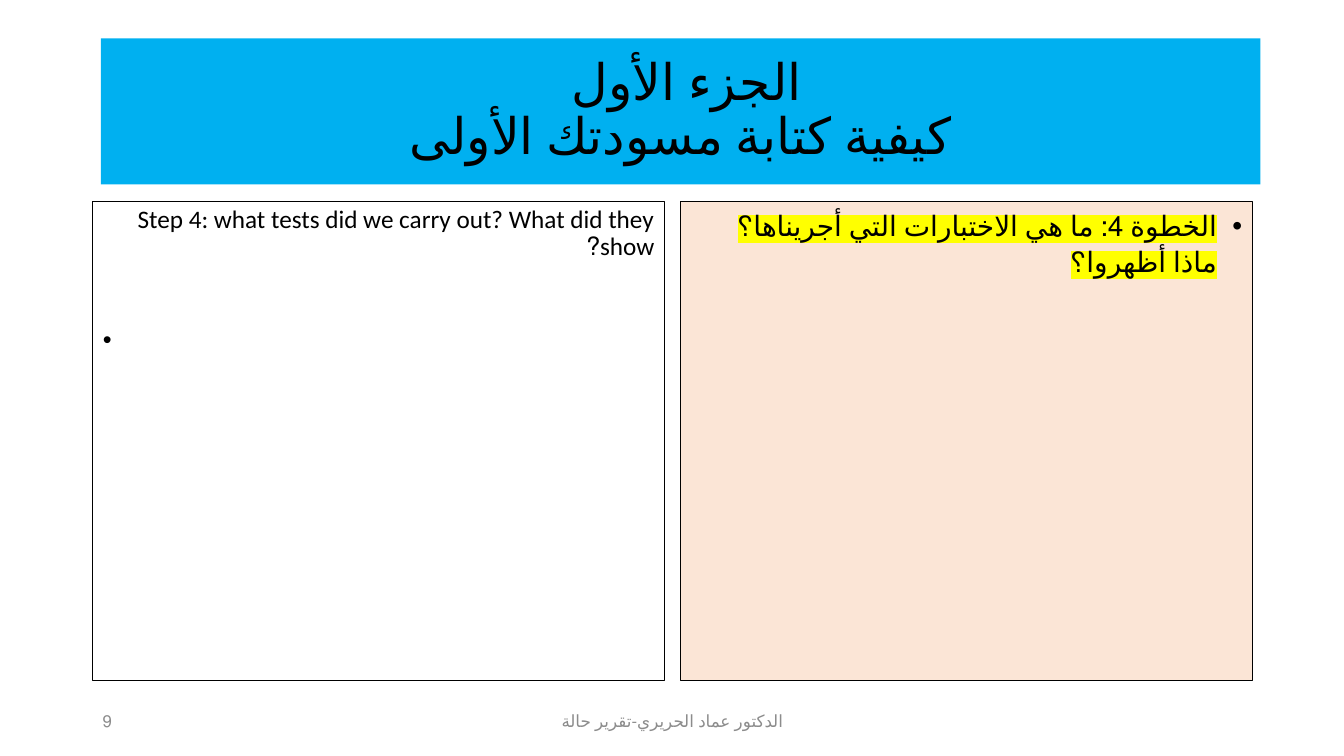
from lxml.etree import SubElement
from pptx import Presentation
from pptx.dml.color import RGBColor
from pptx.enum.lang import MSO_LANGUAGE_ID as Language
from pptx.enum.text import MSO_ANCHOR as Anchor, MSO_AUTO_SIZE as AutoSize, PP_ALIGN as Align
from pptx.oxml.ns import qn
from pptx.util import Inches, Pt

BLACK = RGBColor(0x00, 0x00, 0x00)
BLUE = RGBColor(0x00, 0xB0, 0xF0)
PEACH = RGBColor(0xFB, 0xE5, 0xD6)
YELLOW = RGBColor(0xFF, 0xFF, 0x00)
GRAY = RGBColor(0x8C, 0x8C, 0x8C)

MARGIN, GUTTER, COLUMN = 0.92, 0.16, 5.67
BODY_TOP, BODY_HEIGHT = 2.0, 4.75
FOOTER_TOP, FOOTER_HEIGHT = 6.95, 0.4


def place(shape, box):
    shape.left, shape.top, shape.width, shape.height = map(Inches, box)


def format_runs(paragraph, size, font_name="Calibri", color=BLACK, language=Language.ARABIC):
    for run in paragraph.runs:
        run.font.size = Pt(size)
        run.font.name = font_name
        run.font.color.rgb = color
        run.font.language_id = language


def set_direction(paragraph, align, right_to_left=True):
    paragraph.alignment = align
    paragraph._p.get_or_add_pPr().set("rtl", str(int(right_to_left)))


def set_bullet(paragraph, character=None):
    """Hang the paragraph on a bullet, or remove its bullet and indent."""
    properties = paragraph._p.get_or_add_pPr()
    indent = Inches(0.25) if character else 0
    properties.set("marL", str(indent))
    properties.set("marR", "0")
    properties.set("indent", str(-indent))
    if character:
        SubElement(properties, qn("a:buFont")).set("typeface", "Arial")
        SubElement(properties, qn("a:buChar")).set("char", character)
    else:
        SubElement(properties, qn("a:buNone"))


def highlight(run, color):
    mark = SubElement(run._r.get_or_add_rPr(), qn("a:highlight"))
    SubElement(mark, qn("a:srgbClr")).set("val", str(color))
    run._r.rPr.find(qn("a:solidFill")).addnext(mark)


def fill_title(title, box):
    place(title, box)
    title.fill.solid()
    title.fill.fore_color.rgb = BLUE
    frame = title.text_frame
    frame.text = "الجزء الأول \vكيفية كتابة مسودتك الأولى"
    frame.auto_size = AutoSize.NONE
    frame.vertical_anchor = Anchor.MIDDLE
    paragraph = frame.paragraphs[0]
    set_direction(paragraph, Align.CENTER)
    paragraph.line_spacing = 0.9
    format_runs(paragraph, 36, "Roboto")


def frame_panel(panel, box):
    place(panel, box)
    panel.line.color.rgb = BLACK
    panel.line.width = Pt(0.75)
    panel.text_frame.auto_size = AutoSize.NONE
    panel.text_frame.vertical_anchor = Anchor.TOP


def fill_english_panel(panel, box):
    frame_panel(panel, box)
    frame = panel.text_frame
    frame.text = "Step 4: what tests did we carry out? What did they show?\n•"
    question, lone_bullet = frame.paragraphs
    set_direction(question, Align.RIGHT)
    set_direction(lone_bullet, Align.LEFT, right_to_left=False)
    for paragraph, space_before, font_name in (
        (question, 0, "Calibri"),
        (lone_bullet, 47, "Arial"),
    ):
        set_bullet(paragraph)
        paragraph.line_spacing = 0.9
        paragraph.space_before = Pt(space_before)
        paragraph.space_after = Pt(0)
        format_runs(paragraph, 18, font_name, language=Language.ENGLISH_US)


def fill_arabic_panel(panel, box):
    frame_panel(panel, box)
    panel.fill.solid()
    panel.fill.fore_color.rgb = PEACH
    panel.text_frame.text = "الخطوة 4: ما هي الاختبارات التي أجريناها؟ ماذا أظهروا؟"
    paragraph = panel.text_frame.paragraphs[0]
    set_direction(paragraph, Align.RIGHT)
    set_bullet(paragraph, "•")
    paragraph.line_spacing = 1.07
    paragraph.space_before = Pt(0)
    paragraph.space_after = Pt(8)
    format_runs(paragraph, 20)
    highlight(paragraph.runs[0], YELLOW)


def add_footer_text(slide, text, left, width, align):
    box = [Inches(n) for n in (left, FOOTER_TOP, width, FOOTER_HEIGHT)]
    frame = slide.shapes.add_textbox(*box).text_frame
    frame.word_wrap = True
    frame.vertical_anchor = Anchor.MIDDLE
    frame.text = text
    set_direction(frame.paragraphs[0], align)
    format_runs(frame.paragraphs[0], 12, color=GRAY)


def main():
    presentation = Presentation()
    presentation.slide_width = Inches(13.33)
    presentation.slide_height = Inches(7.5)
    slide = presentation.slides.add_slide(presentation.slide_layouts[3])
    title, english, arabic = slide.placeholders
    fill_title(title, (1, 0.38, 11.5, 1.45))
    fill_english_panel(english, (MARGIN, BODY_TOP, COLUMN, BODY_HEIGHT))
    fill_arabic_panel(arabic, (MARGIN + COLUMN + GUTTER, BODY_TOP, COLUMN, BODY_HEIGHT))
    add_footer_text(slide, "الدكتور عماد الحريري-تقرير حالة", 4.42, 4.5, Align.CENTER)
    add_footer_text(slide, "9", MARGIN, 3, Align.LEFT)
    presentation.save("out.pptx")


if __name__ == "__main__":
    main()
